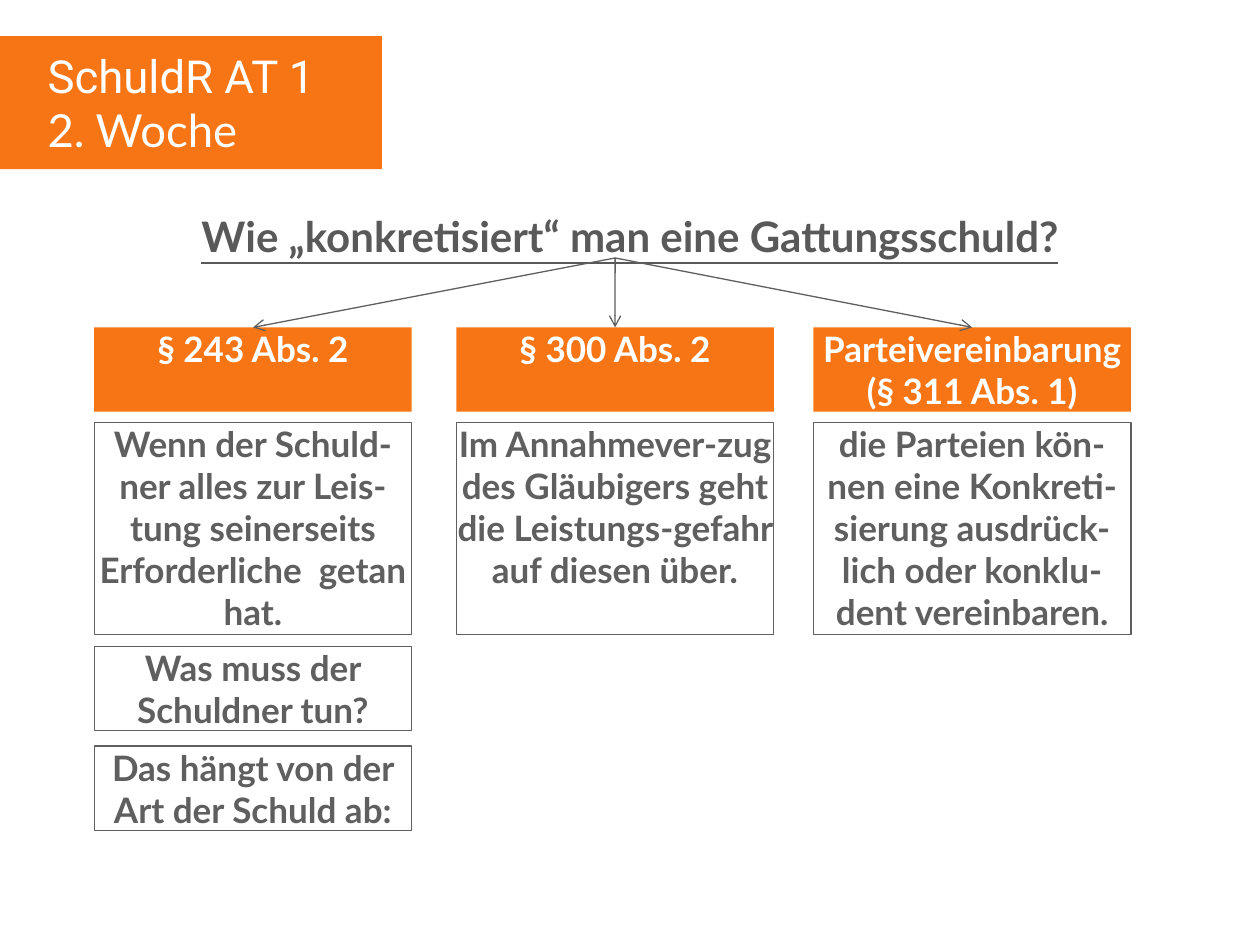
from dataclasses import dataclass

from lxml import etree
from pptx import Presentation
from pptx.dml.color import RGBColor
from pptx.enum.shapes import MSO_CONNECTOR, MSO_SHAPE
from pptx.enum.text import MSO_ANCHOR, MSO_AUTO_SIZE, PP_ALIGN
from pptx.oxml.ns import qn
from pptx.util import Cm, Pt

RECT, STRAIGHT = MSO_SHAPE.RECTANGLE, MSO_CONNECTOR.STRAIGHT
TOP, CENTER, NO_FIT = MSO_ANCHOR.TOP, PP_ALIGN.CENTER, MSO_AUTO_SIZE.NONE


@dataclass(frozen=True)
class Theme:
    orange = RGBColor(0xF7, 0x75, 0x15)
    white = RGBColor(0xFF, 0xFF, 0xFF)
    grey = RGBColor(0x5F, 0x5F, 0x5F)
    title_grey = RGBColor(0x59, 0x59, 0x59)
    font = "Lato"
    week_font = "Roboto"
    week_size = Pt(26)
    title_size = Pt(24)
    box_size = Pt(20)
    line_width = Pt(0.75)


theme = Theme()


def set_font(p, size, color, name=theme.font, bold=False):
    p.font.name, p.font.size, p.font.bold = name, size, bold
    p.font.color.rgb = color


def add_box(x, y, height, lines, fill, color, outline=None):
    """Add a column-wide rectangle with centred bold lines."""
    sp = s.shapes.add_shape(RECT, Cm(x), Cm(y), Cm(COLUMN_WIDTH), Cm(height))
    sp.shadow.inherit = False
    sp.fill.solid()
    sp.fill.fore_color.rgb = fill
    if outline is None:
        sp.line.fill.background()
    else:
        sp.line.color.rgb = outline
        sp.line.width = theme.line_width
    tf = sp.text_frame
    tf.word_wrap, tf.auto_size, tf.vertical_anchor = True, NO_FIT, TOP
    tf.margin_left = tf.margin_top = tf.margin_right = tf.margin_bottom = 0
    tf.text = "\n".join(lines)
    for p in tf.paragraphs:
        p.alignment = CENTER
        set_font(p, theme.box_size, color, bold=True)
    return sp


COLUMN_WIDTH = 6.4
HEADER_Y, HEADER_HEIGHT = 6.6, 1.7
BODY_Y, BODY_HEIGHT = 8.52, 4.27
ARROW_START = (12.4, 5.2)

columns = [
    (1.9, ["§ 243 Abs. 2"],
     "Wenn der Schuld-ner alles zur Leis-tung seinerseits "
     "Erforderliche  getan hat."),
    (9.2, ["§ 300 Abs. 2"],
     "Im Annahmever-zug des Gläubigers geht die Leistungs-gefahr "
     "auf diesen über."),
    (16.4, ["Parteivereinbarung", "(§ 311 Abs. 1)"],
     "die Parteien kön-nen eine Konkreti-sierung ausdrück-lich oder "
     "konklu-dent vereinbaren."),
]
follow_ups = [
    (13.03, "Was muss der Schuldner tun?"),
    (15.04, "Das hängt von der Art der Schuld ab:"),
]

prs = Presentation()
prs.slide_width, prs.slide_height = Cm(25.4), Cm(19.05)
s = prs.slides.add_slide(prs.slide_layouts[5])

# Question as slide title
title = s.shapes.title
title.left, title.top, title.width, title.height = Cm(0.3), Cm(4.11), Cm(24.8), Cm(2.49)
tf = title.text_frame
tf.text = "Wie „konkretisiert“ man eine Gattungsschuld?"
tf.word_wrap, tf.auto_size, tf.vertical_anchor = True, NO_FIT, TOP
p = tf.paragraphs[0]
p.alignment, p.space_after = CENTER, Pt(5)
set_font(p, theme.title_size, theme.title_grey, bold=True)
p.font.underline = True

# Course banner
banner = s.shapes.add_shape(RECT, 0, Cm(0.73), Cm(7.7), Cm(2.68))
banner.shadow.inherit = False
banner.fill.solid()
banner.fill.fore_color.rgb = theme.orange
banner.line.fill.background()

week = s.shapes.add_textbox(Cm(0.71), Cm(0.84), Cm(6.6), Cm(2.49))
tf = week.text_frame
tf.word_wrap = True
tf.text = "SchuldR AT 1\n2. Woche"
for p, name in zip(tf.paragraphs, (theme.week_font, theme.font)):
    set_font(p, theme.week_size, theme.white, name)

# Three ways, each with header, arrow and explanation
for x, header_lines, body in columns:
    header = add_box(x, HEADER_Y, HEADER_HEIGHT, header_lines, theme.orange, theme.white)
    start_x, start_y = ARROW_START
    arrow = s.shapes.add_connector(
        STRAIGHT, Cm(start_x), Cm(start_y), Cm(x + COLUMN_WIDTH / 2), Cm(HEADER_Y))
    arrow.end_connect(header, 0)
    arrow.line.color.rgb = theme.grey
    arrow.line.width = theme.line_width
    etree.SubElement(arrow.line._get_or_add_ln(), qn("a:tailEnd"), type="arrow")
    etree.SubElement(arrow._element.spPr, qn("a:effectLst"))
    add_box(x, BODY_Y, BODY_HEIGHT, [body], theme.white, theme.grey, theme.grey)

# Follow-up questions under the first column
for y, text in follow_ups:
    add_box(columns[0][0], y, HEADER_HEIGHT, [text], theme.white, theme.grey, theme.grey)

prs.save("out.pptx")
